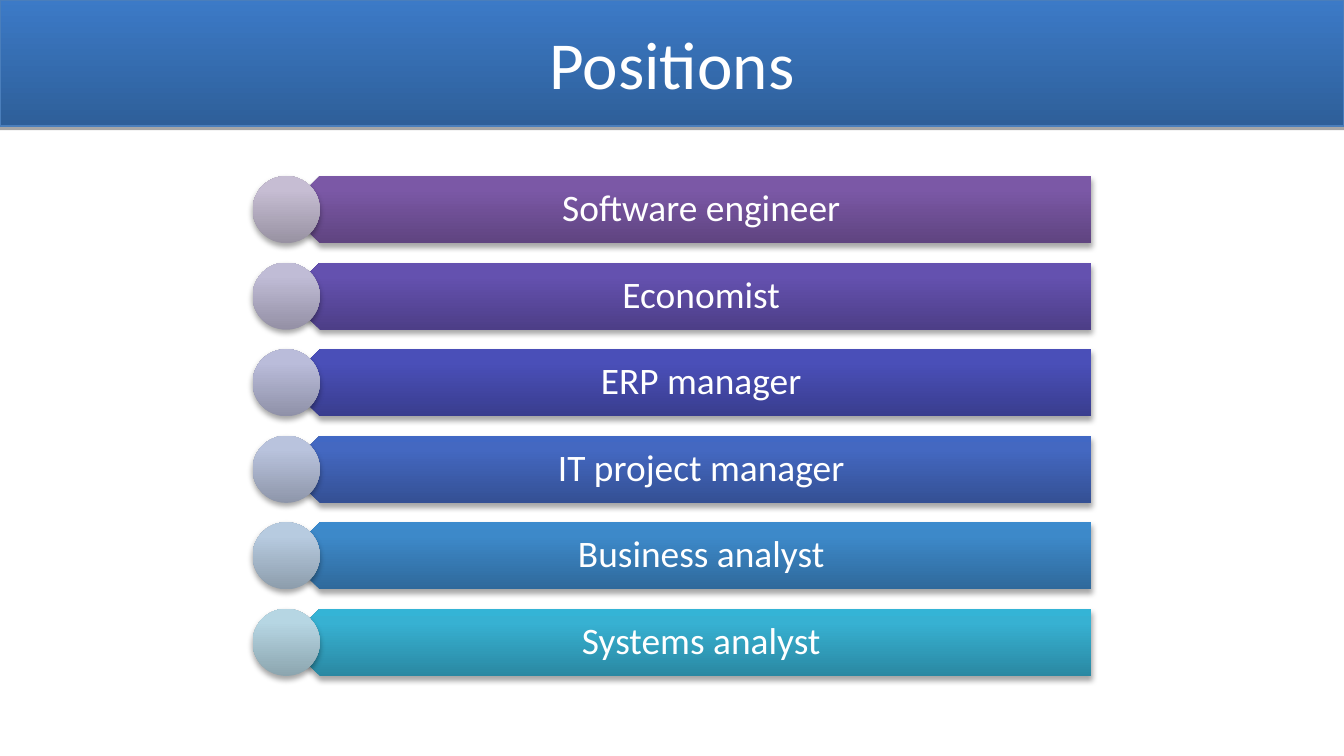
import pptx
import pptx.util
import pptx.oxml
import pptx.dml.color
import pptx.enum.shapes
import pptx.enum.text

COLORS = {
    "text": "FFFFFF",
    "shadow": "000000",
    "border": "4A7EBB",
    "header": ("2E5F99", "3C7AC7"),
}
ROWS = [
    ("Software engineer", ("5F4480", "7B58A6", "7C57A8"), ("9892A2", "C6BDD3", "C6BED4")),
    ("Economist", ("4D3E87", "6451AF", "6450B2"), ("9490A5", "C0BCD6", "C1BCD8")),
    ("ERP manager", ("393D8E", "4A4FB8", "484EBB"), ("8F91A8", "BABCDA", "BABCDB")),
    ("IT project manager", ("345094", "4468C1", "4168C4"), ("8E96AA", "B9C3DD", "B9C3DF")),
    ("Business analyst", ("2F699B", "3D89C9", "3B8ACD"), ("8D9DAC", "B7CBE0", "B7CCE2")),
    ("Systems analyst", ("2A88A2", "37B1D2", "34B4D6"), ("8CA5AF", "B6D6E3", "B6D8E5")),
]
NS = 'xmlns:a="http://schemas.openxmlformats.org/drawingml/2006/main"'
Inches, Pt = pptx.util.Inches, pptx.util.Pt
SHAPE = pptx.enum.shapes.MSO_SHAPE


def paint(sp, colors, blur):
    places = (0, 100) if len(colors) == 2 else (0, 80, 100)
    stops = "".join(
        f'<a:gs pos="{pos * 1000}"><a:srgbClr val="{c}"/></a:gs>'
        for pos, c in zip(places, colors)
    )
    ln = sp.line._get_or_add_ln()
    ln.addprevious(pptx.oxml.parse_xml(
        f'<a:gradFill {NS} rotWithShape="0"><a:gsLst>{stops}</a:gsLst>'
        '<a:lin ang="16200000" scaled="0"/></a:gradFill>'))
    ln.addnext(pptx.oxml.parse_xml(
        f'<a:effectLst {NS}><a:outerShdw blurRad="{Pt(blur)}" dist="{Pt(1.8)}" '
        f'dir="5400000" rotWithShape="0"><a:srgbClr val="{COLORS["shadow"]}">'
        '<a:alpha val="35000"/></a:srgbClr></a:outerShdw></a:effectLst>'))


def write(sp, text, size=20, spacing=0.9, insets=(0.22, 0.08, 0.16, 0.08)):
    tf = sp.text_frame
    tf.word_wrap = True
    tf.auto_size = pptx.enum.text.MSO_AUTO_SIZE.NONE
    tf.vertical_anchor = pptx.enum.text.MSO_ANCHOR.MIDDLE
    tf.margin_left, tf.margin_top, tf.margin_right, tf.margin_bottom = map(Inches, insets)
    p = tf.paragraphs[0]
    p.alignment = pptx.enum.text.PP_ALIGN.CENTER
    p.line_spacing = spacing
    r = p.add_run()
    r.text = text
    r.font.size = Pt(size)
    r.font.name = "Calibri"
    r.font.color.rgb = pptx.dml.color.RGBColor.from_string(COLORS["text"])


prs = pptx.Presentation()
prs.slide_width = Inches(10)
prs.slide_height = prs.slide_width * 9 // 16
s = prs.slides.add_slide(prs.slide_layouts[5])

title = s.shapes.title
title.left, title.top = 0, 0
title.width, title.height = prs.slide_width, prs.slide_height // 6
title.line.color.rgb = pptx.dml.color.RGBColor.from_string(COLORS["border"])
title.line.width = Pt(0.75)
paint(title, COLORS["header"], 0)
write(title, "Positions", size=36, spacing=1.0, insets=(0.1, 0.05, 0.1, 0.05))

top, pitch, height = Inches(1.31), Inches(3.22) // 5, Inches(0.5)
left, right = Inches(1.88), Inches(8.12)
bar_left = left + height // 2
text_left = bar_left + height // 4

for i, (label, bar_colors, dot_colors) in enumerate(ROWS):
    y = top + i * pitch
    bar = s.shapes.add_shape(SHAPE.PENTAGON, bar_left, y, right - bar_left, height)
    bar.rotation = 180
    bar.line.fill.background()
    paint(bar, bar_colors, 3.1)

    write(s.shapes.add_textbox(text_left, y, right - text_left, height), label)

    dot = s.shapes.add_shape(SHAPE.OVAL, left, y, height, height)
    dot.line.fill.background()
    paint(dot, dot_colors, 3.1)

prs.save("out.pptx")
